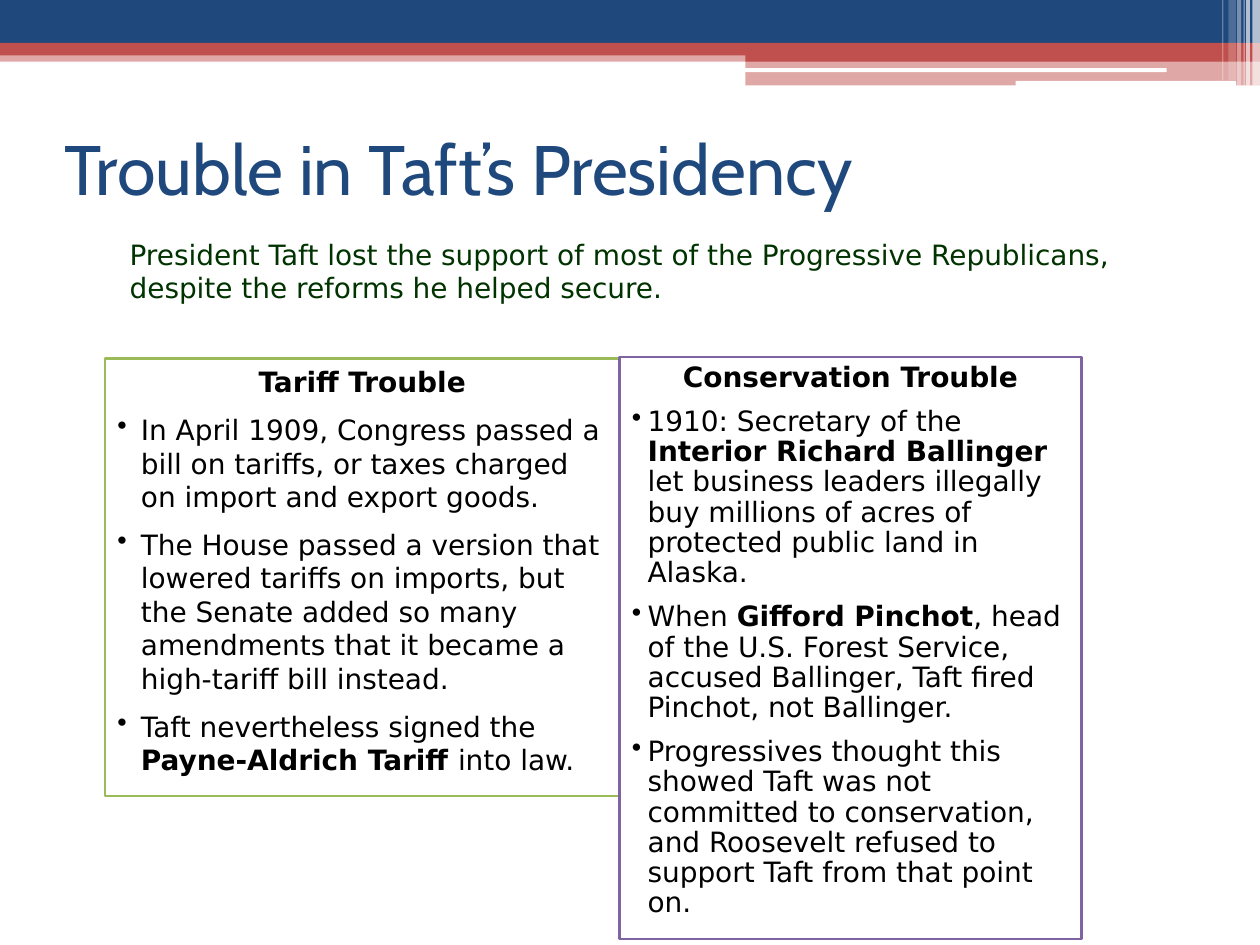
from lxml.etree import SubElement
from pptx import Presentation
from pptx.dml.color import RGBColor
from pptx.enum.shapes import MSO_SHAPE as SHAPE
from pptx.enum.text import MSO_ANCHOR as ANCHOR, MSO_AUTO_SIZE as AUTO_SIZE, PP_ALIGN as ALIGN
from pptx.oxml.ns import qn
from pptx.util import Pt

NAVY, RED, WHITE, BLACK = "1F497D", "C0504D", "FFFFFF", "000000"
DARK_GREEN, GREEN, PURPLE = "003300", "9BBB59", "8064A2"
TITLE_FONT, BODY_FONT = "Cabin", "DejaVu Sans"
SLIDE_WIDTH, SLIDE_HEIGHT = 720, 540

# Bands: left, top, width, height, colour, opacity in percent
BANDS = [
    (0, 28.8, SLIDE_WIDTH, 6.5, RED, 50),
    (0, 0, SLIDE_WIDTH, 24.5, NAVY, 100),
    (0, 24.5, SLIDE_WIDTH, 7.2, RED, 100),
    (426, 28, 294, 7.2, RED, 100),
    (426, 35, 294, 13.8, RED, 50),
]
# White rules across the bands: left, top, width, height
RULES = [(425.5, 39, 241.2, 2.2), (580.3, 46.2, 126, 2.9)]
# White stripes at the right end: left, width, height, opacity in percent
STRIPES = [
    (715.7, 4.3, 49, 65), (712.1, 2.2, 49, 65), (710.6, 0.7, 49, 60),
    (707, 2.2, 49, 40), (702, 4.3, 46, 20), (698.4, 0.7, 46, 30),
]

INTRO = ("President Taft lost the support of most of the Progressive Republicans, "
         "despite the reforms he helped secure.")
# Each point is a list of pieces; every second piece is bold
TARIFF_POINTS = [
    ["In April 1909, Congress passed a bill on tariffs, or taxes charged "
     "on import and export goods."],
    ["The House passed a version that lowered tariffs on imports, but the Senate "
     "added so many amendments that it became a high-tariff bill instead."],
    ["Taft nevertheless signed the ", "Payne-Aldrich Tariff ", "into law."],
]
CONSERVATION_POINTS = [
    ["1910: Secretary of the ", "Interior Richard Ballinger ",
     "let business leaders illegally buy millions of acres of protected "
     "public land in Alaska."],
    ["When ", "Gifford Pinchot", ", head of the U.S. Forest Service, accused "
     "Ballinger, Taft fired Pinchot, not Ballinger."],
    ["Progressives thought this showed Taft was not committed to conservation, "
     "and Roosevelt refused to support Taft from that point on."],
]


def rgb(color):
    return RGBColor.from_string(color)


def add_block(slide, box, color, opacity=100, kind=SHAPE.RECTANGLE):
    block = slide.shapes.add_shape(kind, *map(Pt, box))
    block.shadow.inherit = False
    block.line.fill.background()
    block.fill.solid()
    block.fill.fore_color.rgb = rgb(color)
    if opacity < 100:
        fill_color = block.fill._xPr.find(qn("a:solidFill"))[0]
        SubElement(fill_color, qn("a:alpha"), val=str(opacity * 1000))
    return block


def add_run(paragraph, words, size, color, font=BODY_FONT, bold=False):
    run = paragraph.add_run()
    run.text = words
    run.font.size = Pt(size)
    run.font.name = font
    run.font.bold = bold
    run.font.color.rgb = rgb(color)


def set_indent(paragraph, left, first_line=0):
    properties = paragraph._p.get_or_add_pPr()
    properties.set("marL", str(Pt(left)))
    properties.set("indent", str(Pt(first_line)))
    return properties


def add_text(slide, box, words, size, color, font=BODY_FONT, indent=0, anchor=ANCHOR.TOP):
    frame = slide.shapes.add_textbox(*map(Pt, box)).text_frame
    frame.word_wrap = True
    frame.vertical_anchor = anchor
    set_indent(frame.paragraphs[0], indent)
    add_run(frame.paragraphs[0], words, size, color, font)


def add_panel(slide, box, border, heading, points, indent, line_spacing):
    panel = add_block(slide, box, WHITE)
    panel.line.color.rgb = rgb(border)
    panel.line.width = Pt(1.5)
    frame = panel.text_frame
    frame.word_wrap = True
    frame.auto_size = AUTO_SIZE.SHAPE_TO_FIT_TEXT
    frame.vertical_anchor = ANCHOR.TOP

    title = frame.paragraphs[0]
    title.alignment = ALIGN.CENTER
    title.line_spacing = line_spacing
    add_run(title, heading, 16, BLACK, bold=True)

    for pieces in points:
        point = frame.add_paragraph()
        bullet_properties = set_indent(point, indent, -indent)
        SubElement(bullet_properties, qn("a:buChar"), char="•")
        point.alignment = ALIGN.LEFT
        point.line_spacing = line_spacing
        point.space_before = Pt(8)
        for index, piece in enumerate(pieces):
            add_run(point, piece, 16, BLACK, bold=index % 2 == 1)


def add_header(slide):
    for *box, color, opacity in BANDS:
        add_block(slide, box, color, opacity)
    for box in RULES:
        add_block(slide, box, WHITE, kind=SHAPE.ROUNDED_RECTANGLE)
    for left, width, height, opacity in STRIPES:
        add_block(slide, (left, 0, width, height), WHITE, opacity)


def main():
    deck = Presentation()
    deck.slide_width, deck.slide_height = Pt(SLIDE_WIDTH), Pt(SLIDE_HEIGHT)
    slide = deck.slides.add_slide(deck.slide_layouts[6])

    add_header(slide)

    # Title and introduction
    add_text(slide, (30, 54, 648, 84), "Trouble in Taft’s Presidency", 40, NAVY,
             TITLE_FONT, anchor=ANCHOR.MIDDLE)
    add_text(slide, (54, 132, 588, 46), INTRO, 16, DARK_GREEN, indent=13)

    # The two troubles
    add_panel(slide, (60, 205, 294, 250), GREEN, "Tariff Trouble",
              TARIFF_POINTS, indent=13.5, line_spacing=1)
    add_panel(slide, (354, 204, 264, 332.6), PURPLE, "Conservation Trouble",
              CONSERVATION_POINTS, indent=9, line_spacing=0.9)

    deck.save("out.pptx")


if __name__ == "__main__":
    main()
